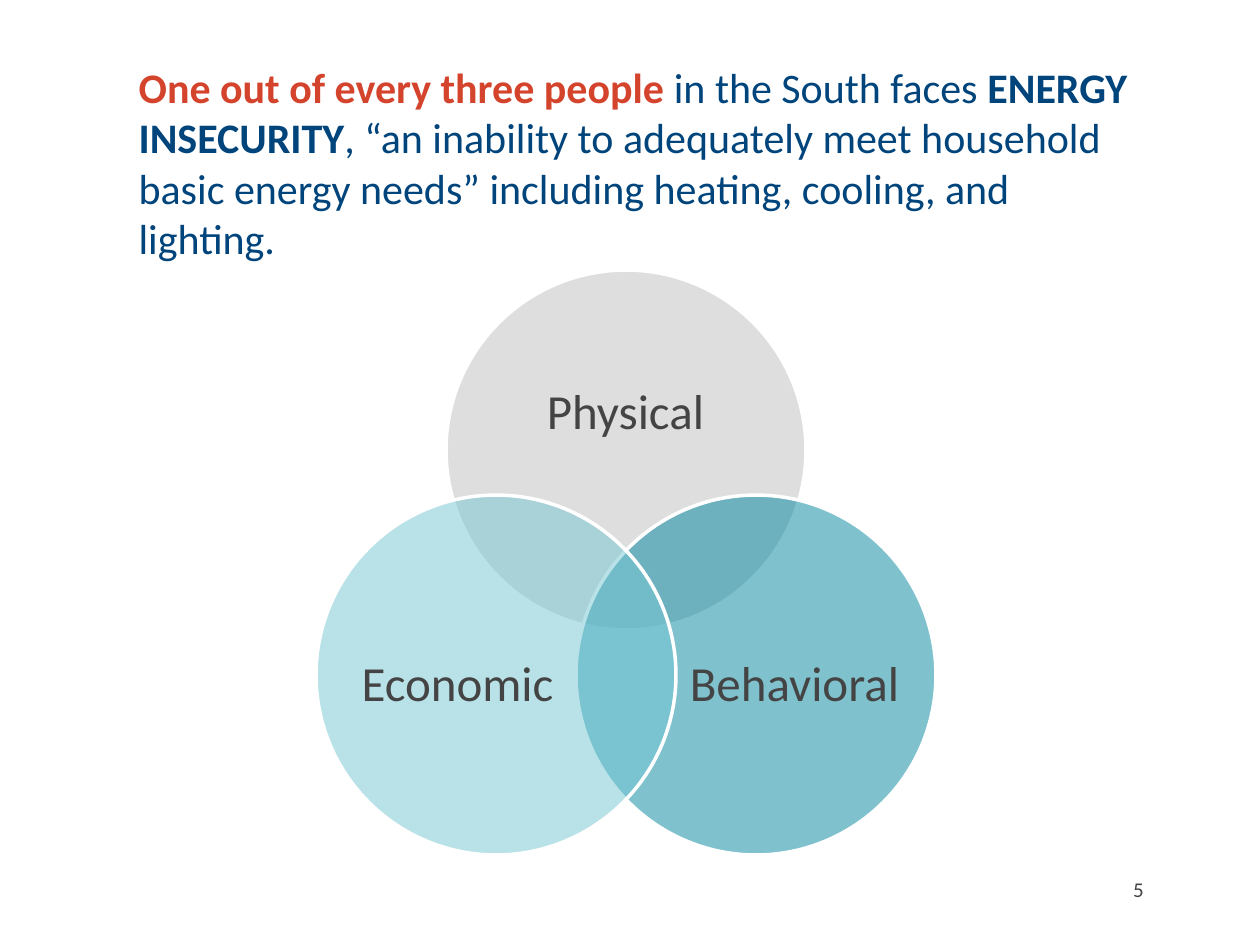
import pptx
import pptx.dml.color
import pptx.enum.shapes
import pptx.enum.text
import pptx.oxml
import pptx.oxml.ns
import pptx.util

SCALE = 914400 / 126
FONT = "Calibri"
NAVY, RED, GRAY, WHITE = "00447C", "D4442D", "444444", "FFFFFF"
ANCHOR = pptx.enum.text.MSO_ANCHOR
ALIGN = pptx.enum.text.PP_ALIGN
DIAMETER = 360
HEADLINE = [
    ("One out of every three people ", RED, True),
    ("in the South faces ", NAVY, False),
    ("ENERGY INSECURITY", NAVY, True),
    (", “an inability to adequately meet household basic energy needs” "
     "including heating, cooling, and lighting.", NAVY, False),
]
CIRCLES = [
    ("Physical", 446, 270, "BFBFBF", (494, 333, 263, 161)),
    ("Behavioral", 576, 495, "00869F", (687, 587, 215, 198)),
    ("Economic", 316, 495, "75C7D3", (350, 587, 215, 198)),
]


def px(length):
    return pptx.util.Emu(round(length * SCALE))


def color(value):
    return pptx.dml.color.RGBColor.from_string(value)


def apply(target, values):
    for name, value in values.items():
        setattr(target, name, value)


def place(box, left, top, width, height):
    apply(box, {"left": px(left), "top": px(top),
                "width": px(width), "height": px(height)})


def add_span(para, text, size, ink, bold=False):
    span = para.add_run()
    span.text = text
    apply(span.font, {"name": FONT, "size": pptx.util.Pt(size), "bold": bold})
    span.font.color.rgb = color(ink)


def fill_title(page):
    box = page.shapes.title
    place(box, 126, 55, 1040, 189)
    apply(box.text_frame, {"word_wrap": True, "vertical_anchor": ANCHOR.TOP,
                           "auto_size": pptx.enum.text.MSO_AUTO_SIZE.NONE})
    para = box.text_frame.paragraphs[0]
    para.alignment = ALIGN.LEFT
    for text, ink, bold in HEADLINE:
        add_span(para, text, 24, ink, bold)


def add_circle(shapes, left, top, fill):
    circle = shapes.add_shape(pptx.enum.shapes.MSO_SHAPE.OVAL,
                              px(left), px(top), px(DIAMETER), px(DIAMETER))
    circle.shadow.inherit = False
    circle.fill.solid()
    circle.fill.fore_color.rgb = color(fill)
    shade = circle.fill._xPr.find(".//" + pptx.oxml.ns.qn("a:srgbClr"))
    shade.append(pptx.oxml.parse_xml(
        f'<a:alpha {pptx.oxml.ns.nsdecls("a")} val="50000"/>'))
    circle.line.color.rgb = color(WHITE)
    circle.line.width = pptx.util.Pt(2)


def add_label(shapes, text, area, size, spacing=1.0, wrap=True):
    box = shapes.add_textbox(*map(px, area))
    apply(box.text_frame, {"word_wrap": wrap, "vertical_anchor": ANCHOR.MIDDLE,
                           "margin_left": 0, "margin_right": 0,
                           "margin_top": 0, "margin_bottom": 0})
    para = box.text_frame.paragraphs[0]
    apply(para, {"alignment": ALIGN.CENTER, "line_spacing": spacing})
    add_span(para, text, size, GRAY)


def main():
    deck = pptx.Presentation()
    apply(deck, {"slide_width": px(1260), "slide_height": px(945)})
    page = deck.slides.add_slide(deck.slide_layouts[5])
    fill_title(page)
    venn = page.shapes.add_group_shape()
    for name, left, top, fill, area in CIRCLES:
        add_circle(venn.shapes, left, top, fill)
        add_label(venn.shapes, name, area, 28, spacing=0.9)
    add_label(page.shapes, "5", (1129, 867, 19, 45), 12, wrap=False)
    deck.save("out.pptx")


if __name__ == "__main__":
    main()
